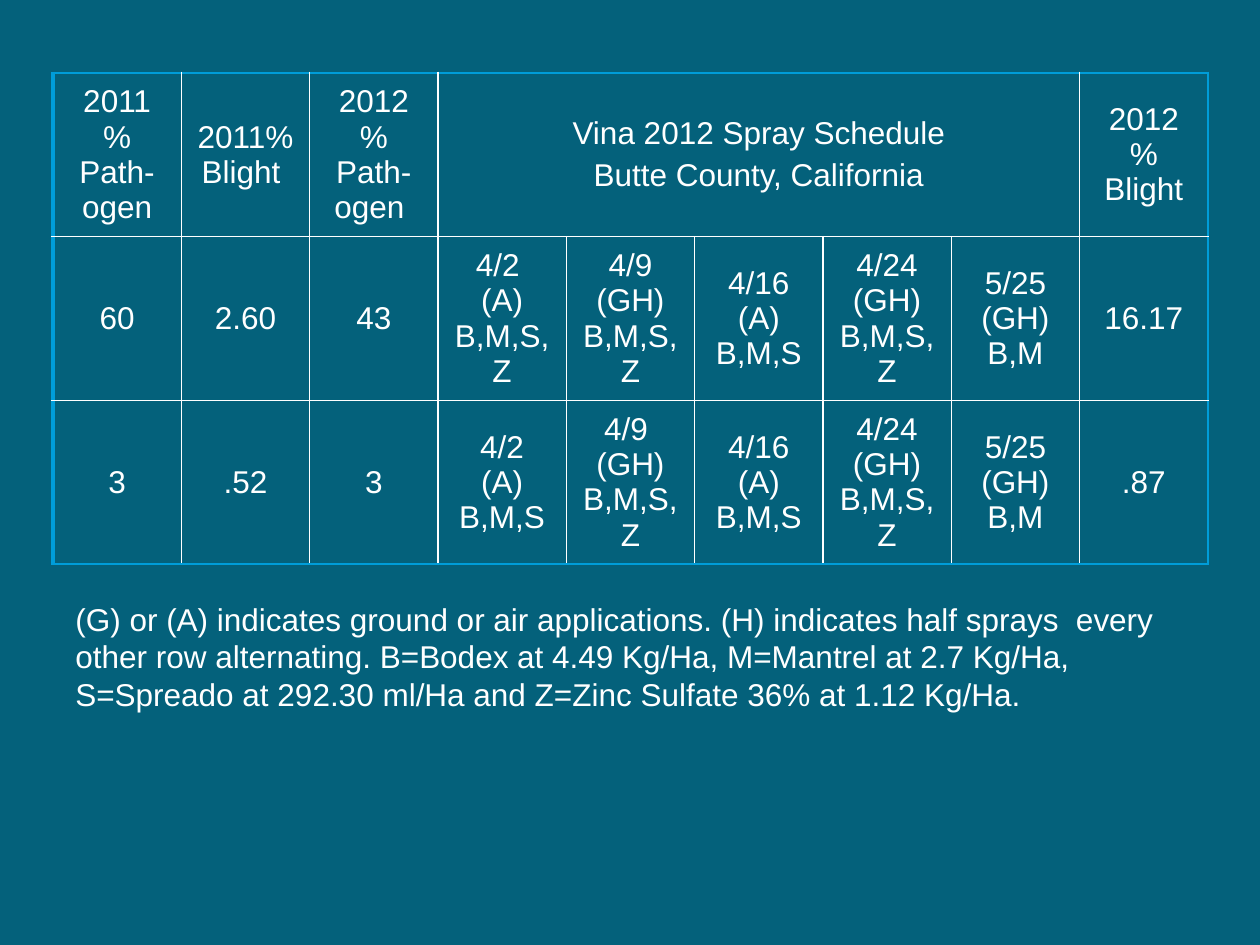
from dataclasses import dataclass
from lxml.etree import SubElement as Sub
from pptx import Presentation
from pptx.dml.color import RGBColor as Rgb
from pptx.enum.text import MSO_ANCHOR as Anchor, PP_ALIGN as Align
from pptx.oxml.ns import qn
from pptx.util import Inches, Pt

HUES = {"back": "04617B", "text": "FFFFFF", "edge": "009DD9"}
WIDE, HIGH = Inches(10), Inches(7.5)


@dataclass
class Box:
    left: float
    top: float
    width: float
    height: float

    def place(self) -> list[int]:
        return [int(WIDE * self.left), int(HIGH * self.top),
                int(WIDE * self.width), int(HIGH * self.height)]


@dataclass
class Line:
    side: str
    hue: str
    width: float


@dataclass
class Cell:
    text: str
    gap: float = 3.6
    span: int = 1


GRID = Box(0.042, 0.077, 0.917, 0.52)
NOTE = Box(0.05, 0.628, 0.892, 0.135)
ROWS = [
    [Cell("2011 % Path-ogen"), Cell("2011% Blight "), Cell("2012 % Path-ogen "),
     Cell("Vina 2012 Spray Schedule\nButte County, California", span=5),
     Cell("2012 % Blight")],
    [Cell("60"), Cell("2.60"), Cell("43"), Cell("4/2 \n(A) B,M,S,Z", gap=0),
     Cell("4/9 (GH) B,M,S,Z"), Cell("4/16 (A) B,M,S"),
     Cell("4/24 (GH) B,M,S,Z"), Cell("5/25 (GH) B,M"), Cell("16.17")],
    [Cell("3"), Cell(".52"), Cell("3"), Cell("4/2\n(A) B,M,S", gap=0),
     Cell("4/9 \n(GH) B,M,S,Z", gap=0), Cell("4/16\n(A) B,M,S", gap=0),
     Cell("4/24\n(GH) B,M,S,Z", gap=0), Cell("5/25\n(GH) B,M", gap=0), Cell(".87")],
]
KEY = ("(G) or (A) indicates ground or air applications. (H) indicates half sprays  "
       "every other row alternating. B=Bodex at 4.49 Kg/Ha, M=Mantrel at 2.7 Kg/Ha, "
       "S=Spreado at 292.30 ml/Ha and Z=Zinc Sulfate 36% at 1.12 Kg/Ha.")


def write(frame, text: str, size: float = 18, hue: str = "text",
          align: Align = Align.LEFT, gap: float = 0) -> None:
    frame.word_wrap = True
    frame.text = text
    for para in frame.paragraphs:
        para.alignment = align
        para.space_before = Pt(gap)
        for run in para.runs:
            run.font.name = "Arial"
            run.font.size = Pt(size)
            run.font.color.rgb = Rgb.from_string(HUES[hue])


def rule(cell, lines: list[Line]) -> None:
    props = cell._tc.get_or_add_tcPr()
    for spot, line in enumerate(lines):
        node = Sub(props, qn(f"a:ln{line.side}"), w=str(Pt(line.width)))
        fill = Sub(node, qn("a:solidFill"))
        Sub(fill, qn("a:srgbClr"), val=HUES[line.hue])
        props.insert(spot, node)


def frame_lines(row: int, col: int, rows: int, cols: int) -> list[Line]:
    outer = {"L": col == 0, "R": col == cols - 1,
             "T": row == 0, "B": row == rows - 1}
    return [Line(side, "edge", 2.25 if side == "L" else 1.5) if edge
            else Line(side, "text", 1) for side, edge in outer.items()]


def draw_grid(slide, box: Box, data: list[list[Cell]]) -> None:
    rows, cols = len(data), sum(item.span for item in data[0])
    table = slide.shapes.add_table(rows, cols, *box.place()).table
    table.first_row = table.horz_banding = False
    for row, items in enumerate(data):
        for col in range(cols):
            cell = table.cell(row, col)
            cell.fill.background()
            rule(cell, frame_lines(row, col, rows, cols))
        col = 0
        for item in items:
            cell = table.cell(row, col)
            if item.span > 1:
                cell.merge(table.cell(row, col + item.span - 1))
            cell.vertical_anchor = Anchor.MIDDLE
            write(cell.text_frame, item.text, align=Align.CENTER, gap=item.gap)
            col += item.span


def main() -> None:
    deck = Presentation()
    deck.slide_width, deck.slide_height = WIDE, HIGH
    slide = deck.slides.add_slide(deck.slide_layouts[6])
    slide.background.fill.solid()
    slide.background.fill.fore_color.rgb = Rgb.from_string(HUES["back"])
    write(slide.shapes.add_textbox(*NOTE.place()).text_frame, KEY)
    draw_grid(slide, GRID, ROWS)
    deck.save("out.pptx")


if __name__ == "__main__":
    main()
